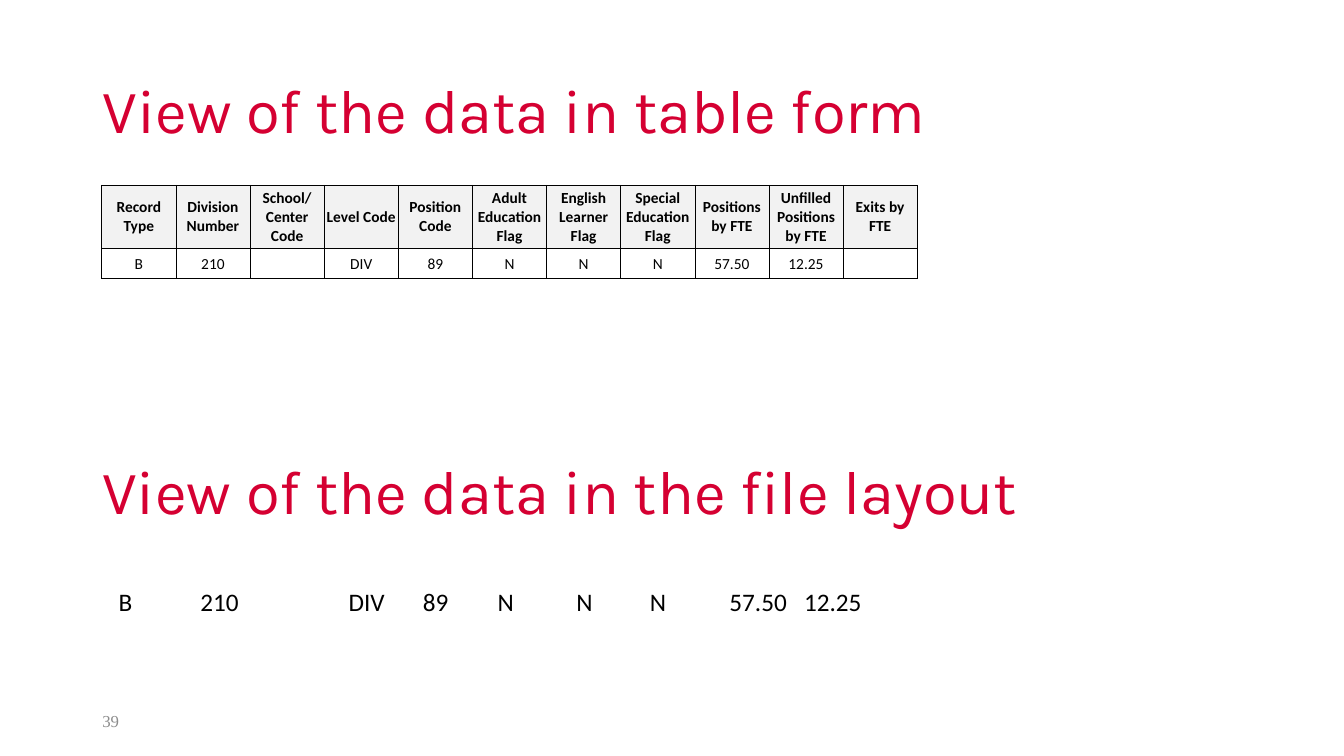
from lxml.etree import SubElement
from pptx import Presentation
from pptx.dml.color import RGBColor
from pptx.enum.text import MSO_ANCHOR, MSO_AUTO_SIZE, PP_ALIGN
from pptx.oxml.ns import qn
from pptx.util import Pt

COLORS = {"red": "D50032", "black": "000000", "gray": "8C8C8C", "pale": "F2F2F2"}
HEAD = {"name": "Karla", "size": Pt(44), "color": "red"}
PAGE = {"name": "Times New Roman", "size": Pt(12), "color": "gray"}
LINE = {"name": "Calibri", "size": Pt(18), "color": "black"}
CELL = {"name": "Calibri", "size": Pt(11), "color": "black"}
ROWS = [
    ["Record Type", "Division Number", "School/\vCenter Code", "Level Code",
     "Position Code", "Adult Education Flag", "English Learner Flag",
     "Special Education Flag", "Positions by FTE", "Unfilled Positions by FTE",
     "Exits by FTE"],
    ["B", "210", "", "DIV", "89", "N", "N", "N", "57.50", "12.25", ""],
]
HEIGHTS = [45, 21.6]
STOPS = [58.3, 111.6, 164.2, 217.4, 270.7, 326.9, 379.4, 436.3, 489.6]


def tint(name):
    """Return the named colour."""
    return RGBColor.from_string(COLORS[name])


def apply(item, values):
    """Set each attribute of the item from a dict."""
    for key, value in values.items():
        setattr(item, key, value)


def style(para, look):
    """Format every run of a paragraph."""
    for run in para.runs:
        for key, value in look.items():
            if key == "color":
                run.font.color.rgb = tint(value)
            else:
                setattr(run.font, key, value)


def place(shape, box):
    """Move a shape to its box."""
    apply(shape, dict(zip(("left", "top", "width", "height"), map(Pt, box))))


def write(shape, box, text, look, space=1.0, anchor=MSO_ANCHOR.MIDDLE):
    """Fill a shape with one left-aligned paragraph."""
    place(shape, box)
    frame = shape.text_frame
    apply(frame, {"word_wrap": True, "auto_size": MSO_AUTO_SIZE.NONE,
                  "vertical_anchor": anchor})
    para = frame.paragraphs[0]
    para.add_run().text = text
    apply(para, {"alignment": PP_ALIGN.LEFT, "line_spacing": space})
    style(para, look)
    return para


def edge(cell):
    """Draw thin black borders around a cell."""
    props = cell._tc.get_or_add_tcPr()
    for side in ("lnL", "lnR", "lnT", "lnB"):
        line = SubElement(props, qn("a:" + side), w=str(Pt(0.5)))
        fill = SubElement(line, qn("a:solidFill"))
        SubElement(fill, qn("a:srgbClr"), val=COLORS["black"])


def label(cell, text, bold):
    """Write centred text in a cell."""
    if text:
        cell.text = text
    para = cell.text_frame.paragraphs[0]
    para.alignment = PP_ALIGN.CENTER
    style(para, {**CELL, "bold": bold})
    if not text:
        SubElement(para._p, qn("a:endParaRPr"), sz="1100")


def grid(slide, box):
    """Build the data table with equal columns."""
    count = len(ROWS[0])
    table = slide.shapes.add_table(len(ROWS), count, *map(Pt, box)).table
    table.horz_banding = False
    for col in table.columns:
        col.width = Pt(box[2] / count)
    for i, (row, texts) in enumerate(zip(table.rows, ROWS)):
        row.height = Pt(HEIGHTS[i])
        for cell, text in zip(row.cells, texts):
            apply(cell, {"margin_left": Pt(0.7), "margin_right": Pt(0.7),
                         "margin_top": Pt(0.7), "margin_bottom": 0,
                         "vertical_anchor": MSO_ANCHOR.MIDDLE})
            edge(cell)
            if i == 0:
                cell.fill.solid()
                cell.fill.fore_color.rgb = tint("pale")
            else:
                cell.fill.background()
            label(cell, text, i == 0)


def record(slide, box):
    """Write the data row as tabbed text."""
    shape = slide.shapes.add_textbox(0, 0, 0, 0)
    text = "\t".join(ROWS[1][:-1])
    para = write(shape, box, text, LINE, 1.07, MSO_ANCHOR.TOP)
    props = para._p.get_or_add_pPr()
    props.set("marL", str(Pt(5)))
    tabs = SubElement(props, qn("a:tabLst"))
    for stop in STOPS:
        SubElement(tabs, qn("a:tab"), pos=str(Pt(stop)), algn="l")


def build(deck):
    """Lay out the slide with both views of the data."""
    slide = deck.slides.add_slide(deck.slide_layouts[5])
    shapes = slide.shapes
    left, wide = 66, 828
    write(shapes.title, (left, 28.8, wide, 104.4),
          "View of the data in table form", HEAD, 0.9)
    write(shapes.add_textbox(0, 0, 0, 0), (left, 500.5, 216, 28.8), "39", PAGE)
    write(shapes.add_textbox(0, 0, 0, 0), (left, 301, wide, 104.4),
          "View of the data in the file layout", HEAD, 0.9)
    grid(slide, (left + 6.7, 132.3, 582.6, sum(HEIGHTS)))
    record(slide, (left + 6.7, 414, 669.6, 31))


def main():
    """Create and save the deck."""
    deck = Presentation()
    apply(deck, {"slide_width": Pt(960), "slide_height": Pt(540)})
    build(deck)
    deck.save("out.pptx")


if __name__ == "__main__":
    main()
